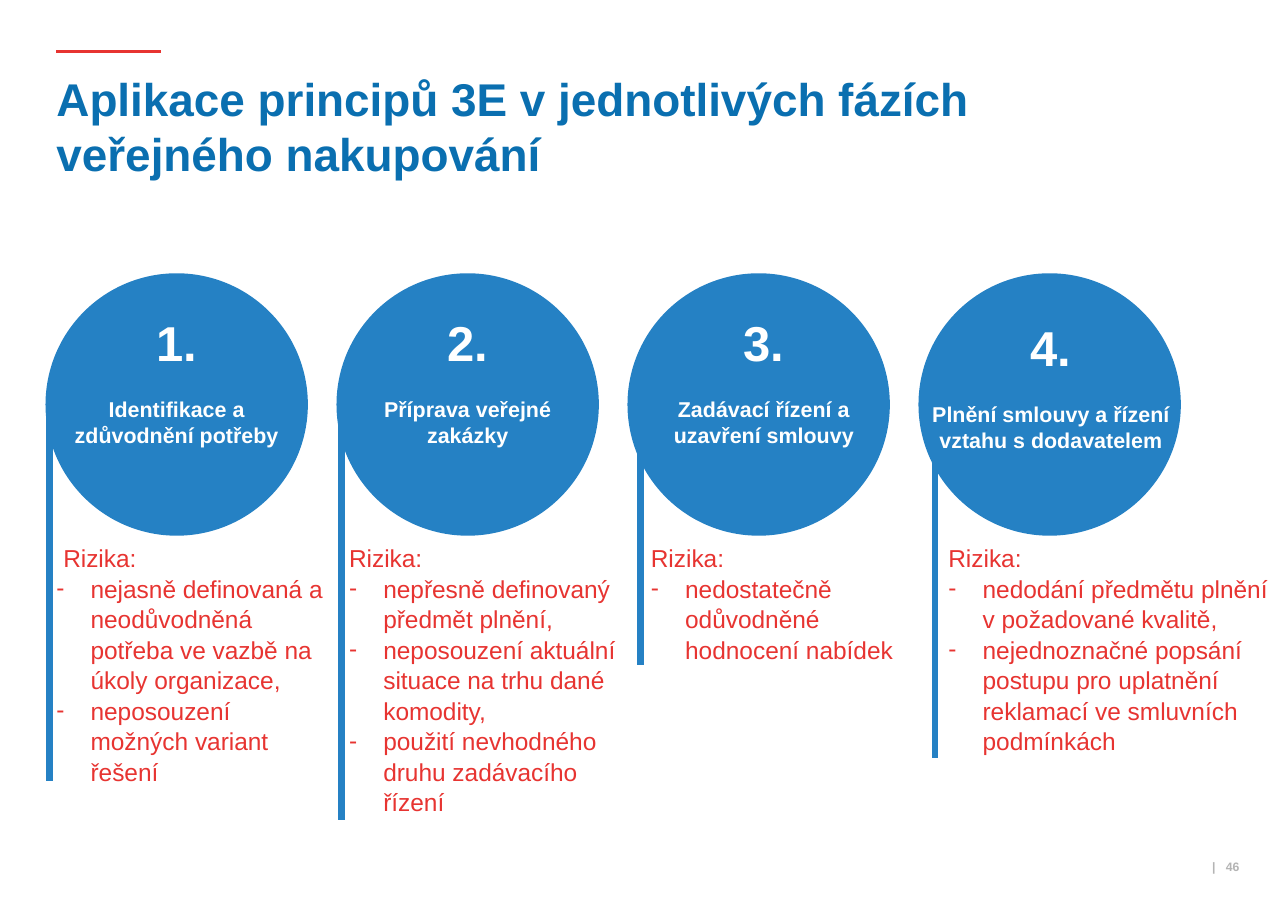
from dataclasses import dataclass

from pptx import Presentation
from pptx.dml.color import RGBColor
from pptx.enum.shapes import MSO_CONNECTOR as LINE, MSO_SHAPE as SHAPE
from pptx.enum.text import MSO_ANCHOR as ANCHOR, MSO_AUTO_SIZE as FIT, PP_ALIGN as ALIGN
from pptx.oxml.ns import qn
from pptx.util import Cm, Pt
from lxml.etree import SubElement

COLORS = {"blue": "2581C4", "title": "0A6FB0", "red": "E73431", "white": "FFFFFF", "grey": "B4B4B4"}
FONT = "Arial"
CIRCLE = 6.05
STAGE_PITCH = 6.71
RISKS_TOP = 6.07


@dataclass
class Stage:
    """One procurement stage; lengths are in cm from the corner of its circle."""
    name: str
    risks: tuple
    label_at: tuple
    risks_left: float
    risks_width: float
    stem: tuple
    heading_indent: float = 0


STAGES = [
    Stage("Identifikace a zdůvodnění potřeby",
          ("nejasně definovaná a neodůvodněná potřeba ve vazbě na úkoly organizace,",
           "neposouzení možných variant řešení"),
          (0, 0.79), 0, 6.7, (0.1, 3.02, 11.71), 0.16),
    Stage("Příprava veřejné zakázky",
          ("nepřesně definovaný předmět plnění,",
           "neposouzení aktuální situace na trhu dané komodity,",
           "použití nevhodného druhu zadávacího řízení"),
          (0, 0.79), 0.04, 6.8, (0.11, 3.35, 12.6)),
    Stage("Zadávací řízení a uzavření smlouvy",
          ("nedostatečně odůvodněné hodnocení nabídek",),
          (0.12, 0.79), 0.29, 6.6, (0.29, 3.94, 9.02)),
    Stage("Plnění smlouvy a řízení vztahu s dodavatelem",
          ("nedodání předmětu plnění v požadované kvalitě,",
           "nejednoznačné popsání postupu pro uplatnění reklamací ve smluvních podmínkách"),
          (0.03, 0.9), 0.44, 8.08, (0.38, 3.96, 11.18)),
]


def style(para, size, color, bold=False):
    """Format every run of a paragraph."""
    for span in para.runs:
        span.font.name = FONT
        span.font.size = Pt(size)
        span.font.bold = bold
        span.font.color.rgb = RGBColor.from_string(COLORS[color])


def clear_margins(frame):
    """Let text start at the very edge of its box."""
    frame.margin_left = frame.margin_right = frame.margin_top = frame.margin_bottom = 0


def add_text(page, left, top, width, height):
    """Add a wrapping text box and return its frame."""
    frame = page.shapes.add_textbox(Cm(left), Cm(top), Cm(width), Cm(height)).text_frame
    frame.word_wrap = True
    return frame


def add_line(page, start, end, color, weight):
    """Draw a straight line without shadow."""
    line = page.shapes.add_connector(LINE.STRAIGHT, *map(Cm, start + end))
    line.line.color.rgb = RGBColor.from_string(COLORS[color])
    line.line.width = Pt(weight)
    SubElement(line._element.spPr, qn("a:effectLst"))


def set_indent(para, left, bullet=None):
    """Indent a paragraph and hang an optional bullet in the indent."""
    props = para._p.get_or_add_pPr()
    props.set("marL", str(Cm(left)))
    if bullet:
        props.set("indent", str(-Cm(left)))
        SubElement(props, qn("a:buFont"), typeface=FONT)
        SubElement(props, qn("a:buChar"), char=bullet)


def add_heading(page, left, top, width, height):
    """Place the red rule and the title beneath it."""
    add_line(page, (left, top), (left + 2.41, top), "red", 2)
    title = page.shapes.title
    title.left, title.top, title.width, title.height = map(Cm, (left, top + 0.43, width, height))
    frame = title.text_frame
    frame.text = "Aplikace principů 3E v jednotlivých fázích veřejného nakupování"
    frame.word_wrap = True
    frame.auto_size = FIT.NONE
    frame.vertical_anchor = ANCHOR.TOP
    clear_margins(frame)
    para = frame.paragraphs[0]
    para.alignment = ALIGN.LEFT
    para.line_spacing = Pt(36)
    style(para, 30, "title", True)


def add_circle(page, stage, number, left, top):
    """Draw the numbered circle of a stage."""
    circle = page.shapes.add_shape(SHAPE.OVAL, Cm(left), Cm(top), Cm(CIRCLE), Cm(CIRCLE))
    circle.shadow.inherit = False
    circle.fill.solid()
    circle.fill.fore_color.rgb = RGBColor.from_string(COLORS["blue"])
    circle.line.fill.background()
    shift, drop = stage.label_at
    frame = add_text(page, left + shift, top + drop, CIRCLE, 4.2)
    frame.text = f"{number}.\n{stage.name}"
    for para, size in zip(frame.paragraphs, (32, 14)):
        para.alignment = ALIGN.CENTER
        style(para, size, "white", True)
    frame.paragraphs[1].space_before = Pt(16)


def add_risks(page, stage, left, top):
    """List the risks of a stage beside its stem."""
    frame = add_text(page, left + stage.risks_left, top + RISKS_TOP, stage.risks_width, 7)
    frame.text = "\n".join(("Rizika:",) + stage.risks)
    for para in frame.paragraphs:
        para.line_spacing = 1.04
        style(para, 16, "red")
    heading, *items = frame.paragraphs
    set_indent(heading, stage.heading_indent)
    for para in items:
        set_indent(para, 0.79, "-")
    shift, start, end = stage.stem
    add_line(page, (left + shift, top + start), (left + shift, top + end), "blue", 4.5)


def add_stages(page, left, top):
    """Set the stages side by side at an equal pitch."""
    for index, stage in enumerate(STAGES):
        stage_left = left + index * STAGE_PITCH
        add_circle(page, stage, index + 1, stage_left, top)
        add_risks(page, stage, stage_left, top)


def add_page_number(page, left, top, width, height):
    """Place the page number with a widened gap after its bar."""
    frame = add_text(page, left, top, width, height)
    clear_margins(frame)
    frame.vertical_anchor = ANCHOR.MIDDLE
    para = frame.paragraphs[0]
    para.alignment = ALIGN.RIGHT
    for text in ("|", " ", "46"):
        para.add_run().text = text
    style(para, 8, "grey", True)
    para.runs[1].font._element.set("spc", "445")


def main():
    """Build the deck with its single page."""
    deck = Presentation()
    deck.slide_width, deck.slide_height = Cm(29.7), Cm(21)
    page = deck.slides.add_slide(deck.slide_layouts[5])
    add_heading(page, 1.3, 1.19, 24.97, 2.57)
    add_stages(page, 1.05, 6.3)
    add_page_number(page, 24.18, 19.81, 4.4, 0.33)
    deck.save("out.pptx")


if __name__ == "__main__":
    main()
